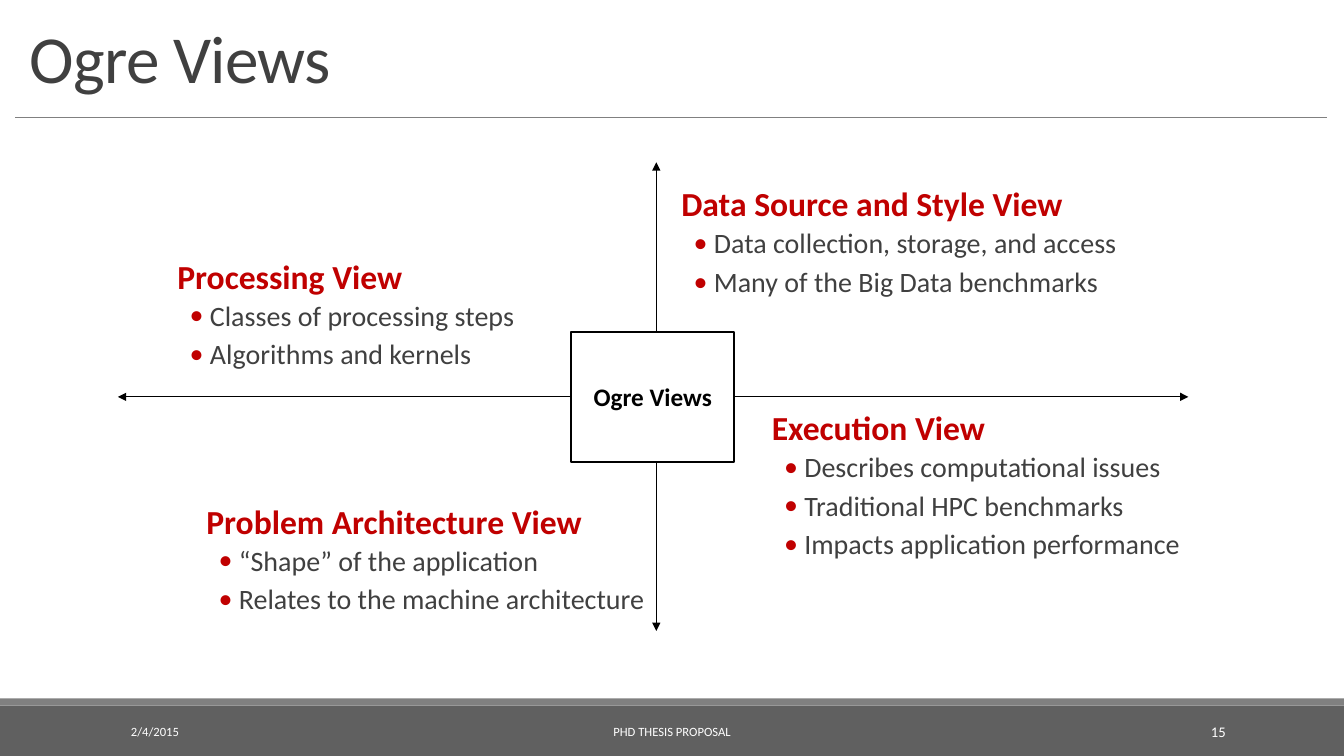
"""Build the Ogre Views slide: four views around a central box on crossed arrows."""
from lxml import etree
from pptx import Presentation
from pptx.dml.color import RGBColor
from pptx.enum.shapes import MSO_CONNECTOR, MSO_SHAPE
from pptx.enum.text import MSO_ANCHOR, PP_ALIGN
from pptx.oxml.ns import qn
from pptx.util import Cm, Pt

LEFT, CENTER, RIGHT = PP_ALIGN.LEFT, PP_ALIGN.CENTER, PP_ALIGN.RIGHT
TOP, MIDDLE, BOTTOM = MSO_ANCHOR.TOP, MSO_ANCHOR.MIDDLE, MSO_ANCHOR.BOTTOM
RECT, STRAIGHT = MSO_SHAPE.RECTANGLE, MSO_CONNECTOR.STRAIGHT
COLORS = {"text": "404040", "accent": "C00000", "bar": "606060",
          "rule": "808080", "black": "000000", "white": "FFFFFF"}
RGB = {name: RGBColor.from_string(value) for name, value in COLORS.items()}

prs = Presentation()
prs.slide_width, prs.slide_height = Cm(33.87), Cm(19.05)
s = prs.slides.add_slide(prs.slide_layouts[6])


def write(p, text, size, color, bold=False, **spacing):
    """Fill a paragraph with one run and set its spacing."""
    for name, value in spacing.items():
        setattr(p, name, value)
    r = p.add_run()
    r.text = text
    for name, value in {"name": "Calibri", "size": Pt(size), "bold": bold}.items():
        setattr(r.font, name, value)
    r.font.color.rgb = RGB[color]
    return r


def text_box(x, y, w, h, anchor, inset=0.25):
    """Add a wrapping text box and return its text frame."""
    tf = s.shapes.add_textbox(Cm(x), Cm(y), Cm(w), Cm(h)).text_frame
    settings = {"word_wrap": True, "vertical_anchor": anchor,
                "margin_left": Cm(inset), "margin_right": Cm(inset)}
    for name, value in settings.items():
        setattr(tf, name, value)
    return tf


for y, h, color in [(17.78, 1.27, "bar"), (17.6, 0.18, "rule")]:
    sp = s.shapes.add_shape(RECT, 0, Cm(y), prs.slide_width, Cm(h))
    sp.shadow.inherit = False
    sp.fill.solid()
    sp.fill.fore_color.rgb = RGB[color]
    sp.line.fill.background()

tf = text_box(0.5, 0.38, 32.85, 2.2, BOTTOM)
r = write(tf.paragraphs[0], "Ogre Views", 48, "text", line_spacing=0.85)
r.font._element.set("spc", "-50")

footer = [
    (3.05, 6.86, "2/4/2015", 9, LEFT),
    (10.24, 13.39, "PHD THESIS PROPOSAL", 9, CENTER),
    (27.5, 3.64, "15", 10.5, RIGHT),
]
for x, w, text, size, align in footer:
    tf = text_box(x, 17.93, w, 1.01, MIDDLE)
    write(tf.paragraphs[0], text, size, "white", alignment=align)

axis_x, axis_y = 16.54, 10
lines = [
    (0.38, 2.95, 33.43, 2.95, "rule", 0.5, False),
    (axis_x, 11.6, axis_x, 15.9, "black", 0.75, True),
    (axis_x, 8.4, axis_x, 4.09, "black", 0.75, True),
    (18.5, axis_y, 29.95, axis_y, "black", 0.75, True),
    (14.4, axis_y, 2.97, axis_y, "black", 0.75, True),
]
for x1, y1, x2, y2, color, width, arrow in lines:
    line = s.shapes.add_connector(STRAIGHT, Cm(x1), Cm(y1), Cm(x2), Cm(y2))
    line.line.color.rgb = RGB[color]
    line.line.width = Pt(width)
    if arrow:
        etree.SubElement(line.line._get_or_add_ln(), qn("a:tailEnd"), type="triangle")
    etree.SubElement(line._element.spPr, qn("a:effectLst"))

sp = s.shapes.add_shape(RECT, Cm(14.4), Cm(8.36), Cm(4.1), Cm(3.28))
sp.shadow.inherit = False
sp.fill.solid()
sp.fill.fore_color.rgb = RGB["white"]
sp.line.color.rgb = RGB["black"]
sp.line.width = Pt(1.25)
sp.text_frame.vertical_anchor = MIDDLE
write(sp.text_frame.paragraphs[0], "Ogre Views", 18, "black", True,
      alignment=CENTER, space_after=Pt(4))

views = [
    (4.22, 6.43, 9.53, 3.2, "Processing View",
     ["Classes of processing steps", "Algorithms and kernels"]),
    (4.95, 12.6, 16.03, 3.73, "Problem Architecture View",
     ["“Shape” of the application", "Relates to the machine architecture"]),
    (19.2, 10.24, 14.6, 4.67, "Execution View",
     ["Describes computational issues", "Traditional HPC benchmarks",
      "Impacts application performance"]),
    (16.92, 4.6, 11.38, 3.25, "Data Source and Style View",
     ["Data collection, storage, and access", "Many of the Big Data benchmarks"]),
]
for x, y, w, h, heading, points in views:
    tf = text_box(x, y, w, h, TOP, inset=0)
    p = tf.paragraphs[0]
    write(p, heading, 24, "accent", True, line_spacing=0.9, space_after=Pt(2))
    p._p.get_or_add_pPr().set("marL", str(Cm(0.25)))
    for point in points:
        p = tf.add_paragraph()
        write(p, point, 20, "text", level=1, line_spacing=0.9,
              space_before=Pt(2), space_after=Pt(4))
        pPr = p._p.get_or_add_pPr()
        pPr.set("marL", str(Cm(1.07)))
        pPr.set("indent", str(Cm(-0.51)))
        bullet_color = etree.SubElement(pPr, qn("a:buClr"))
        etree.SubElement(bullet_color, qn("a:srgbClr"), val=COLORS["accent"])
        etree.SubElement(pPr, qn("a:buFont"), typeface="Calibri")
        etree.SubElement(pPr, qn("a:buChar"), char="•")

prs.save("out.pptx")
